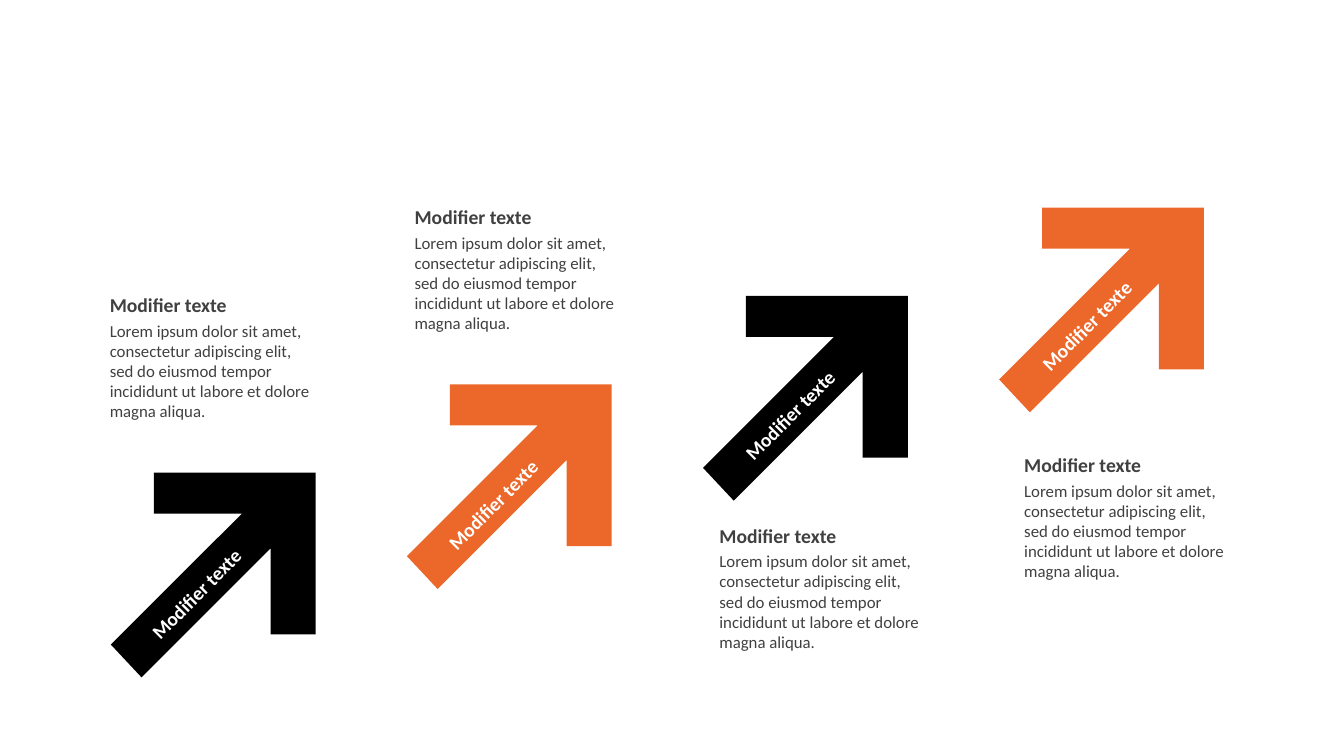
from pptx import Presentation
from pptx.dml.color import RGBColor
from pptx.enum.text import MSO_ANCHOR as Anchor, MSO_AUTO_SIZE as AutoSize, PP_ALIGN as Align
from pptx.util import Inches, Pt

COLORS = {"black": "000000", "orange": "EC672A", "white": "FFFFFF", "gray": "404040"}
ARROW_OUTLINE = [
    (0.21, 0), (1, 0), (1, 0.79), (0.78, 0.79), (0.78, 0.37),
    (0.15, 1), (0, 0.84), (0.64, 0.2), (0.21, 0.2),
]
HEADING = "Modifier texte"
BODY = (
    "Lorem ipsum dolor sit amet, consectetur adipiscing elit, sed do eiusmod "
    "tempor incididunt ut labore et dolore magna aliqua."
)
ARROW_COLORS = ["black", "orange", "black", "orange"]
CAPTION_TOPS = [38, 26.4, 68.53, 59.2]


class SlideBuilder:
    font_name = "Calibri"

    def __init__(self, presentation):
        self.width = presentation.slide_width
        self.height = presentation.slide_height
        self.slide = presentation.slides.add_slide(presentation.slide_layouts[6])

    def across(self, percent):
        return round(self.width * percent / 100)

    def down(self, percent):
        return round(self.height * percent / 100)

    def arrow(self, left, top, color):
        side = self.across(15.23)
        points = [
            (self.across(left) + round(x * side), self.down(top) + round(y * side))
            for x, y in ARROW_OUTLINE
        ]
        builder = self.slide.shapes.build_freeform(*points[0])
        builder.add_line_segments(points[1:], close=True)
        shape = builder.convert_to_shape()
        shape.shadow.inherit = False
        shape.fill.solid()
        shape.fill.fore_color.rgb = RGBColor.from_string(COLORS[color])
        shape.line.fill.background()

    def text(self, shapes, content, box, size, color, bold=False,
             anchor=Anchor.MIDDLE, align=Align.LEFT, rotation=0):
        left, top, width, height = box
        shape = shapes.add_textbox(
            self.across(left), self.down(top), self.across(width), self.down(height)
        )
        shape.rotation = rotation
        frame = shape.text_frame
        frame.word_wrap = True
        frame.auto_size = AutoSize.SHAPE_TO_FIT_TEXT
        frame.vertical_anchor = anchor
        paragraph = frame.paragraphs[0]
        paragraph.alignment = align
        run = paragraph.add_run()
        run.text = content
        run.font.name = self.font_name
        run.font.size = Pt(size)
        run.font.bold = bold
        run.font.color.rgb = RGBColor.from_string(COLORS[color])

    def arrow_label(self, left, top):
        self.text(self.slide.shapes, HEADING, (left, top, 13.28, 4.53), 14, "white",
                  bold=True, align=Align.CENTER, rotation=315)

    def caption(self, left, top):
        group = self.slide.shapes.add_group_shape()
        self.text(group.shapes, HEADING, (left, top, 17.03, 4.53), 14, "gray", bold=True)
        self.text(group.shapes, BODY, (left, top + 3.7, 17.03, 14.8), 12, "gray",
                  anchor=Anchor.TOP)


def main():
    presentation = Presentation()
    presentation.slide_width = Inches(13.33)
    presentation.slide_height = Inches(7.5)
    builder = SlideBuilder(presentation)
    for step, color in enumerate(ARROW_COLORS):
        builder.arrow(8.25 + 22.03 * step, 62.53 - 11.69 * step, color)
    for step in range(len(ARROW_COLORS)):
        builder.arrow_label(7.95 + 22.08 * step, 76.27 - 11.82 * step)
    for step, top in enumerate(CAPTION_TOPS):
        builder.caption(7.43 + 22.68 * step, top)
    presentation.save("out.pptx")


if __name__ == "__main__":
    main()
